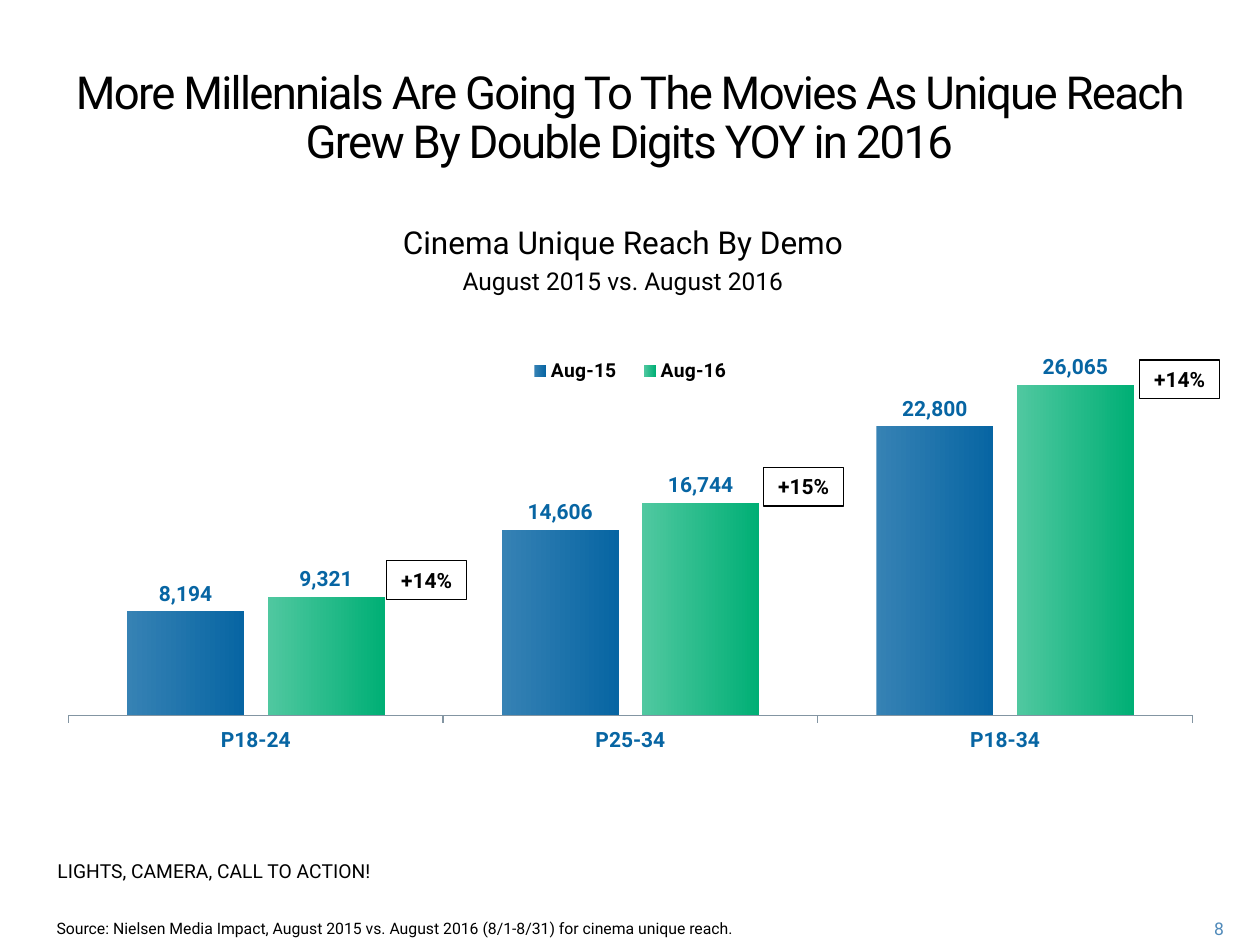
from lxml.etree import SubElement
from pptx import Presentation
from pptx.chart.data import CategoryChartData as ChartData
from pptx.dml.color import RGBColor as Rgb
from pptx.enum.chart import XL_CHART_TYPE as ChartType, XL_LABEL_POSITION as LabelPos
from pptx.enum.chart import XL_LEGEND_POSITION as LegendPos, XL_TICK_MARK as Tick
from pptx.enum.shapes import MSO_SHAPE as Preset
from pptx.enum.text import MSO_ANCHOR as Anchor, PP_ALIGN as Align
from pptx.oxml.ns import qn
from pptx.util import Cm, Pt

COLOURS = {
    "ink": "000000", "paper": "FFFFFF", "label": "0765A3", "number": "508ABA", "axis": "8395A2",
    "blue": ("3682B4", "0765A3"), "green": ("50C8A0", "00AF75"),
}
SERIES = {
    "Aug-15": ((8194, 14606, 22800), "blue"),
    "Aug-16": ((9321, 16744, 26065), "green"),
}


def colour(name):
    """Return the RGB value of a named colour."""
    return Rgb.from_string(COLOURS[name])


class ReachSlide:
    """Hold the style and the current page, and draw each kind of element."""

    font_name = "Roboto"

    def __init__(self, deck):
        """Add a blank page to the deck."""
        self.page = deck.slides.add_slide(deck.slide_layouts[6])

    def style(self, font, size, ink="ink", bold=False):
        """Apply the house font with the given size, colour and weight."""
        formats = {"name": self.font_name, "size": Pt(size), "bold": bold}
        for key, value in formats.items():
            setattr(font, key, value)
        font.color.rgb = colour(ink)

    def text(self, place, lines, align=Align.LEFT, ink="ink", pitch=None, spacing=None):
        """Add a text box with one paragraph for each (words, size) pair."""
        frame = self.page.shapes.add_textbox(*map(Cm, place)).text_frame
        frame.word_wrap = True
        for index, (words, size) in enumerate(lines):
            para = frame.paragraphs[0] if index == 0 else frame.add_paragraph()
            formats = {"alignment": align, "line_spacing": pitch}
            if index:
                formats["space_before"] = Pt(size * 0.2)
            for key, value in formats.items():
                setattr(para, key, value)
            span = para.add_run()
            span.text = words
            self.style(span.font, size, ink)
            if spacing:
                span.font._element.set("spc", str(spacing))

    def growth(self, left, top, words):
        """Add an outlined box with a growth figure."""
        box = self.page.shapes.add_shape(Preset.RECTANGLE, *map(Cm, (left, top, 1.62, 0.78)))
        box.shadow.inherit = False
        box.fill.background()
        box.line.color.rgb = colour("ink")
        box.line.width = Pt(0.75)
        frame = box.text_frame
        formats = {"word_wrap": False, "vertical_anchor": Anchor.MIDDLE}
        for key, value in formats.items():
            setattr(frame, key, value)
        para = frame.paragraphs[0]
        para.alignment = Align.CENTER
        span = para.add_run()
        span.text = words
        self.style(span.font, 12, bold=True)

    def layout(self, parent, before, fractions, inner=False):
        """Place a chart part by fractions of the chart area."""
        layout = parent.makeelement(qn("c:layout"))
        manual = SubElement(layout, qn("c:manualLayout"))
        settings = {"layoutTarget": "inner"} if inner else {}
        settings.update(xMode="edge", yMode="edge", **dict(zip("xywh", fractions)))
        for key, value in settings.items():
            SubElement(manual, qn(f"c:{key}")).set("val", str(value))
        for old in parent.findall(qn("c:layout")):
            parent.remove(old)
        parent.find(qn(before)).addprevious(layout)

    def columns(self, place, categories, series):
        """Add the clustered column chart."""
        data = ChartData(number_format="#,##0")
        data.categories = categories
        for name, (values, _) in series.items():
            data.add_series(name, values)
        chart = self.page.shapes.add_chart(
            ChartType.COLUMN_CLUSTERED, *map(Cm, place), data).chart
        self.style(chart.font, 18)
        chart.has_title = False
        chart.has_legend = True
        legend = chart.legend
        legend.position = LegendPos.TOP
        legend.include_in_layout = False
        self.style(legend.font, 11, bold=True)
        self.layout(legend._element, "c:overlay", (0.4, 0.15, 0.2, 0.07))
        formats = {"minimum_scale": 0, "maximum_scale": 30000,
                   "has_major_gridlines": False, "visible": False}
        for key, value in formats.items():
            setattr(chart.value_axis, key, value)
        axis = chart.category_axis
        axis.major_tick_mark = Tick.OUTSIDE
        axis.format.line.color.rgb = colour("axis")
        axis.format.line.width = Pt(0.75)
        self.style(axis.tick_labels.font, 12, "label", True)
        plot = chart.plots[0]
        for key, value in {"gap_width": 100, "overlap": -20, "vary_by_categories": False}.items():
            setattr(plot, key, value)
        area = chart._chartSpace.chart.plotArea
        self.layout(area, "c:barChart", (0.02, 0.11, 0.96, 0.79), inner=True)
        for bars, (_, shade) in zip(plot.series, series.values()):
            fill = bars.format.fill
            fill.gradient()
            fill.gradient_angle = 0
            for stop, value in zip(fill.gradient_stops, COLOURS[shade]):
                stop.color.rgb = Rgb.from_string(value)
            labels = bars.data_labels
            formats = {"show_value": True, "position": LabelPos.OUTSIDE_END,
                       "number_format": "#,##0", "number_format_is_linked": False}
            for key, value in formats.items():
                setattr(labels, key, value)
            self.style(labels.font, 12, "label", True)


def main():
    """Build and save the deck."""
    deck = Presentation()
    deck.slide_width, deck.slide_height = Cm(25.4), Cm(19.05)
    slide = ReachSlide(deck)
    slide.page.background.fill.solid()
    slide.page.background.fill.fore_color.rgb = colour("paper")
    slide.text((23.37, 18.39, 1.55, 0.64), [("8", 10)], Align.RIGHT, "number")
    slide.columns((0.91, 5.69, 23.6, 9.7), ("P18-24", "P25-34", "P18-34"), SERIES)
    title = "More Millennials Are Going To The Movies As Unique Reach Grew By Double Digits YOY in 2016"
    slide.text((0.46, 1.27, 24.46, 3.56), [(title, 26)], Align.CENTER, pitch=Pt(28), spacing=-100)
    slide.text((0.33, 4.37, 24.46, 2.29), [
        ("Cinema Unique Reach By Demo", 18), ("August 2015 vs. August 2016", 14)], Align.CENTER)
    source = ("Source: Nielsen Media Impact, August 2015 vs. August 2016 (8/1-8/31) "
              "for cinema unique reach.")
    slide.text((0.89, 18.39, 15.44, 0.66), [(source, 9)])
    for left, top, words in ((7.79, 11.3, "+14%"), (15.39, 9.42, "+15%"), (22.97, 7.26, "+14%")):
        slide.growth(left, top, words)
    slide.text((0.91, 17.2, 7.82, 1.19), [("LIGHTS, CAMERA, CALL TO ACTION!", 11)])
    deck.save("out.pptx")


if __name__ == "__main__":
    main()
